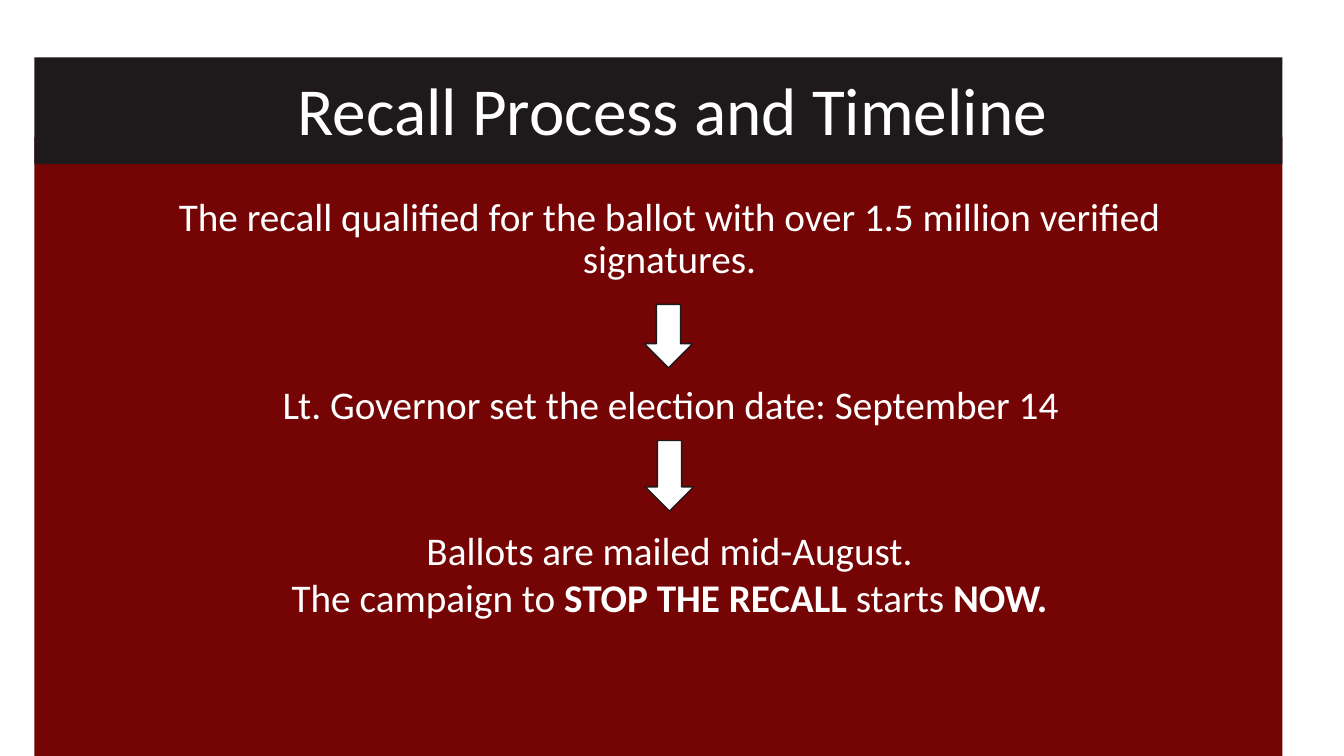
from pptx import Presentation
from pptx.dml.color import RGBColor
from pptx.enum.shapes import MSO_SHAPE
from pptx.enum.text import MSO_ANCHOR, PP_ALIGN
from pptx.util import Inches, Pt

RECTANGLE = MSO_SHAPE.RECTANGLE
DOWN_ARROW = MSO_SHAPE.DOWN_ARROW
MIDDLE = MSO_ANCHOR.MIDDLE
TOP = MSO_ANCHOR.TOP
CENTER = PP_ALIGN.CENTER

WHITE = "FFFFFF"
DARK = "1E191A"
RED = "750404"
TITLE_LAYOUT = 5

STEPS = [
    ((1.54, 1.91, 10.2, 1.11),
     [[("The recall qualified for the ballot with over 1.5 million verified signatures.", False)]],
     {"line_spacing": 0.9, "space_before": Pt(10)}),
    ((2.06, 3.72, 9.18, 0.57),
     [[("Lt. Governor set the election date: September 14", False)]],
     {}),
    ((2.03, 5.17, 9.22, 1.04),
     [[("Ballots are mailed mid-August.", False)],
      [("The campaign to ", False), ("STOP THE RECALL ", True),
       ("starts ", False), ("NOW.", True)]],
     {}),
]
ARROWS = [(6.39, 3.02, 0.48, 0.63), (6.4, 4.37, 0.48, 0.7)]


def color(hex_value):
    return RGBColor.from_string(hex_value)


def apply_format(target, values):
    for name, value in values.items():
        setattr(target, name, value)


def inches(box):
    return [Inches(length) for length in box]


def add_filled(slide, kind, box, fill, outline=None):
    shape = slide.shapes.add_shape(kind, *inches(box))
    shape.shadow.inherit = False
    shape.fill.solid()
    shape.fill.fore_color.rgb = color(fill)
    if outline:
        shape.line.color.rgb = color(outline)
        shape.line.width = Pt(1)
    else:
        shape.line.fill.background()
    return shape


def write_text(frame, paragraphs, size, anchor, paragraph_format):
    apply_format(frame, {"word_wrap": True, "vertical_anchor": anchor})
    for index, runs in enumerate(paragraphs):
        paragraph = frame.add_paragraph() if index else frame.paragraphs[0]
        apply_format(paragraph, {"alignment": CENTER, **paragraph_format})
        for text, bold in runs:
            run = paragraph.add_run()
            run.text = text
            apply_format(run.font, {"name": "Calibri", "size": Pt(size), "bold": bold})
            run.font.color.rgb = color(WHITE)


def add_title(slide, text, box):
    title = slide.shapes.title
    apply_format(title, dict(zip(("left", "top", "width", "height"), inches(box))))
    write_text(title.text_frame, [[(text, False)]], 48, MIDDLE, {"line_spacing": 0.9})
    return title


def add_step(slide, box, paragraphs, paragraph_format):
    step = slide.shapes.add_textbox(*inches(box))
    write_text(step.text_frame, paragraphs, 28, TOP, paragraph_format)


def main():
    deck = Presentation()
    apply_format(deck, {"slide_width": Inches(13.33), "slide_height": Inches(7.5)})
    slide = deck.slides.add_slide(deck.slide_layouts[TITLE_LAYOUT])

    title = add_title(slide, "Recall Process and Timeline", (0.92, 0.4, 11.5, 1.45))
    body_panel = add_filled(slide, RECTANGLE, (0.34, 1.36, 12.38, 6.14), RED)
    title_band = add_filled(slide, RECTANGLE, (0.34, 0.57, 12.38, 1.06), DARK)
    for backdrop in (body_panel, title_band):
        title.element.addprevious(backdrop.element)

    for box, paragraphs, paragraph_format in STEPS:
        add_step(slide, box, paragraphs, paragraph_format)
    for box in ARROWS:
        add_filled(slide, DOWN_ARROW, box, WHITE, DARK)

    deck.save("out.pptx")


if __name__ == "__main__":
    main()
